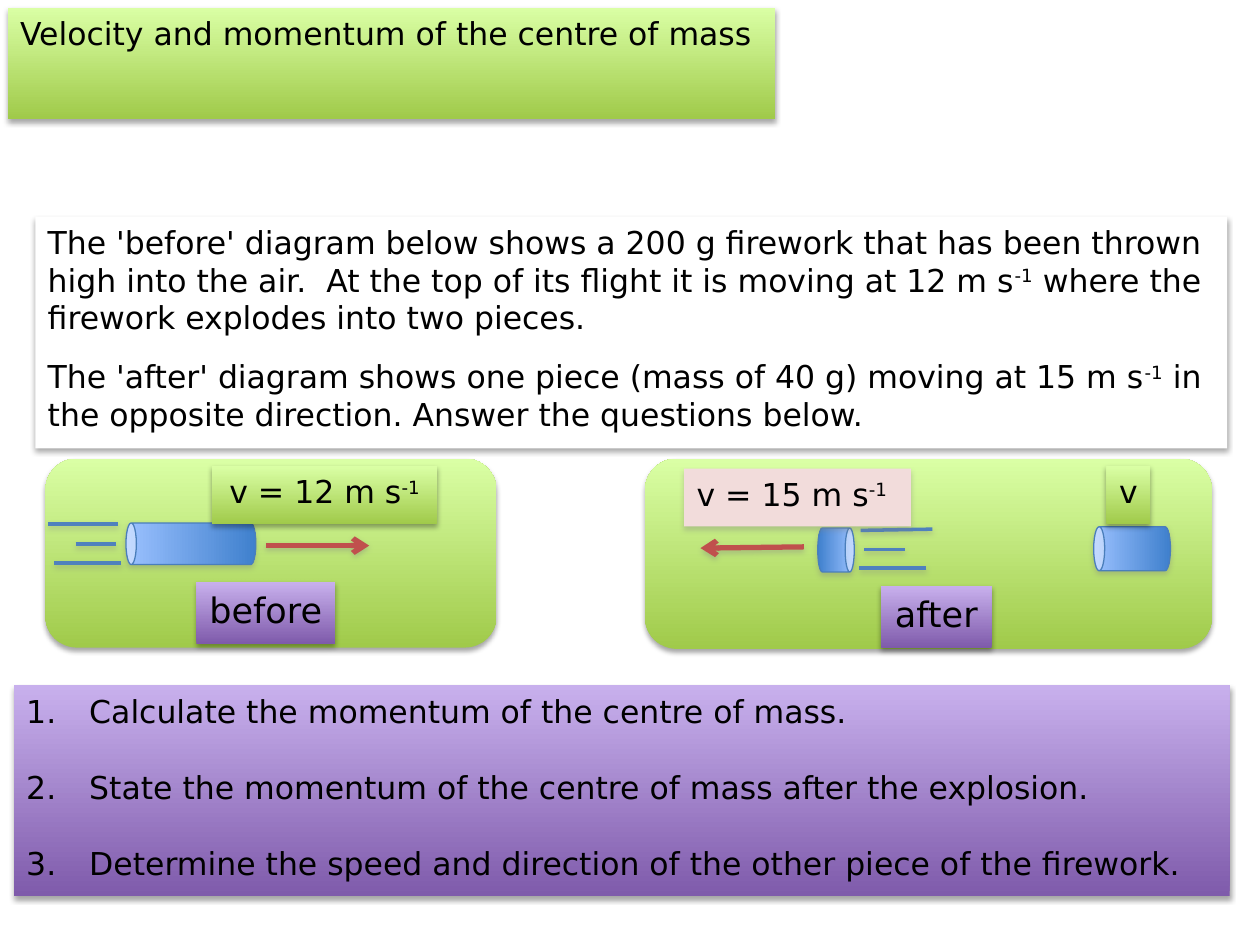
from typing import NamedTuple

import pptx
import pptx.dml.color
import pptx.enum.dml
import pptx.enum.shapes
import pptx.enum.text
import pptx.oxml
import pptx.oxml.ns
import pptx.util
from lxml import etree

Pt = pptx.util.Pt
qn = pptx.oxml.ns.qn
RGBColor = pptx.dml.color.RGBColor
Shapes = pptx.enum.shapes.MSO_SHAPE
Align = pptx.enum.text.PP_ALIGN

FONT = "DejaVu Sans"
COLORS = {
    "text": "000000", "paper": "FFFFFF", "pink": "F2DCDB",
    "green dark": "A0CA4A", "green light": "DAFFA5",
    "purple dark": "7F5BAB", "purple light": "C8B0ED",
    "blue light": "9BC1FF", "blue dark": "3F80CD",
    "can edge": "4A7EBB", "motion": "4F81BD", "arrow": "C0504D",
    "black shadow": "000000", "grey shadow": "808080",
}
# Gradient stops and counter-clockwise angle
GRADIENTS = {
    "green": ("green dark", "green light", 90),
    "purple": ("purple dark", "purple light", 90),
    "blue": ("blue light", "blue dark", 270),
}


class Box(NamedTuple):
    left: float
    top: float
    width: float
    height: float


class Label(NamedTuple):
    text: str
    box: Box
    fill: str
    size: float = 18
    align: Align = Align.CENTER
    shadow: str = "black shadow"


class Can(NamedTuple):
    box: Box
    rotation: float


class Stroke(NamedTuple):
    x1: float
    y1: float
    x2: float
    y2: float


PANELS = [Box(368.6, 262.1, 324, 108.7), Box(25.9, 262.1, 257.8, 108)]
CANS = [
    Can(Box(97.2, 273.6, 23.8, 74.2), 270),
    Can(Box(465.1, 303.8, 25.2, 20.9), 90),
    Can(Box(634.3, 291.6, 25.2, 43.9), 270),
]
MOTION_LINES = [
    Stroke(27.4, 299.5, 67.7, 299.5),
    Stroke(31, 321.8, 69.1, 321.8),
    Stroke(43.2, 311, 66.2, 311),
    Stroke(532.8, 302.4, 491.8, 303.1),
    Stroke(529.2, 324.7, 491, 324.7),
    Stroke(517, 313.9, 493.9, 313.9),
]
VELOCITY_ARROWS = [
    Stroke(151.9, 311.8, 211, 311.8),
    Stroke(459.4, 312.5, 400.3, 313.2),
]
LABELS = [
    Label("before", Box(112.3, 332.6, 79.2, 35.3), "purple", 20),
    Label("after", Box(503.3, 334.8, 63.4, 35.3), "purple", 20),
    Label("v = 12 m s|-1", Box(121, 266.4, 128.9, 33.1), "green"),
    Label("v = 15 m s|-1", Box(391, 267.8, 129.6, 33.1), "pink",
          align=Align.LEFT, shadow="grey shadow"),
    Label("v", Box(632.2, 266.4, 25.2, 33.1), "green"),
]
STORY = [
    "The 'before' diagram below shows a 200 g firework that has been thrown "
    "high into the air.  At the top of its flight it is moving at 12 m s|-1| "
    "where the firework explodes into two pieces.",
    "The 'after' diagram shows one piece (mass of 40 g) moving at 15 m s|-1| "
    "in the opposite direction. Answer the questions below.",
]
QUESTIONS = [
    "Calculate the momentum of the centre of mass.",
    "State the momentum of the centre of mass after the explosion.",
    "Determine the speed and direction of the other piece of the firework.",
]


def rgb(name: str) -> RGBColor:
    return RGBColor.from_string(COLORS[name])


def add_shadow(shape, color: str, opacity: int = 35, distance: float = 1.8) -> None:
    effects = etree.SubElement(shape._element.spPr, qn("a:effectLst"))
    shadow = etree.SubElement(
        effects, qn("a:outerShdw"), blurRad=str(Pt(3.1)), dist=str(Pt(distance)),
        dir="5400000", rotWithShape="0")
    color_element = etree.SubElement(shadow, qn("a:srgbClr"), val=COLORS[color])
    etree.SubElement(color_element, qn("a:alpha"), val=str(opacity * 1000))


def paint(shape, fill: str, shadow: str = "black shadow", edge: str = "") -> None:
    if fill in GRADIENTS:
        first, last, angle = GRADIENTS[fill]
        shape.fill.gradient()
        shape.fill.gradient_angle = angle
        for stop, name in zip(shape.fill.gradient_stops, (first, last)):
            stop.color.rgb = rgb(name)
    else:
        shape.fill.solid()
        shape.fill.fore_color.rgb = rgb(fill)
    if edge:
        shape.line.color.rgb = rgb(edge)
        shape.line.width = Pt(0.75)
    else:
        shape.line.fill.background()
    add_shadow(shape, shadow)


def add_box(slide, kind: Shapes, box: Box):
    return slide.shapes.add_shape(kind, *map(Pt, box))


def write(shape, texts: list[str], size: float = 18, align: Align = Align.LEFT,
          wrap: bool = False) -> None:
    """Write one paragraph per text; every second part between bars is superscript."""
    frame = shape.text_frame
    frame.word_wrap = wrap
    frame.auto_size = pptx.enum.text.MSO_AUTO_SIZE.SHAPE_TO_FIT_TEXT
    frame.vertical_anchor = pptx.enum.text.MSO_ANCHOR.TOP
    frame.margin_left = frame.margin_right = frame.margin_bottom = Pt(7.2)
    frame.margin_top = Pt(3.6)
    for index, text in enumerate(texts):
        paragraph = frame.add_paragraph() if index else frame.paragraphs[0]
        paragraph.alignment = align
        for position, part in enumerate(text.split("|")):
            run = paragraph.add_run()
            run.text = part
            run.font.name = FONT
            run.font.size = Pt(size)
            run.font.color.rgb = rgb("text")
            if position % 2:
                run._r.get_or_add_rPr().set("baseline", "30000")


def number(paragraph) -> None:
    properties = paragraph._p.get_or_add_pPr()
    properties.set("marL", str(Pt(36)))
    properties.set("indent", str(Pt(-36)))
    etree.SubElement(properties, qn("a:buAutoNum"), type="arabicPeriod")


def add_stroke(slide, stroke: Stroke, color: str, width: float, arrow: bool = False) -> None:
    connector = slide.shapes.add_connector(
        pptx.enum.shapes.MSO_CONNECTOR.STRAIGHT, *map(Pt, stroke))
    connector.line.color.rgb = rgb(color)
    connector.line.width = Pt(width)
    if arrow:
        etree.SubElement(connector.line._get_or_add_ln(), qn("a:tailEnd"), type="arrow")
    add_shadow(connector, "grey shadow", 38, 1.6)


def main() -> None:
    presentation = pptx.Presentation()
    presentation.slide_width, presentation.slide_height = Pt(720), Pt(540)
    slide = presentation.slides.add_slide(presentation.slide_layouts[5])

    title = slide.shapes.title
    title.left, title.top, title.width, title.height = map(Pt, (4.3, 4.3, 438.5, 33.1))
    paint(title, "green")
    write(title, ["Velocity and momentum of the centre of mass"])

    for panel in PANELS:
        paint(add_box(slide, Shapes.ROUNDED_RECTANGLE, panel), "green")

    story = add_box(slide, Shapes.RECTANGLE, Box(20.2, 123.8, 681.1, 132.5))
    paint(story, "paper")
    write(story, STORY, wrap=True)
    for paragraph in story.text_frame.paragraphs:
        paragraph.space_after = Pt(12)

    questions = add_box(slide, Shapes.RECTANGLE, Box(7.9, 391.7, 694.8, 120.2))
    paint(questions, "purple")
    write(questions, QUESTIONS)
    for index, paragraph in enumerate(questions.text_frame.paragraphs):
        number(paragraph)
        if index:
            paragraph.space_before = Pt(22)

    for can in CANS:
        shape = add_box(slide, Shapes.CAN, can.box)
        shape.rotation = can.rotation
        paint(shape, "blue", "grey shadow", "can edge")
    for stroke in MOTION_LINES:
        add_stroke(slide, stroke, "motion", 2)
    for stroke in VELOCITY_ARROWS:
        add_stroke(slide, stroke, "arrow", 3, arrow=True)
    for label in LABELS:
        shape = add_box(slide, Shapes.RECTANGLE, label.box)
        paint(shape, label.fill, label.shadow)
        write(shape, [label.text], label.size, label.align)

    presentation.save("out.pptx")


if __name__ == "__main__":
    main()
